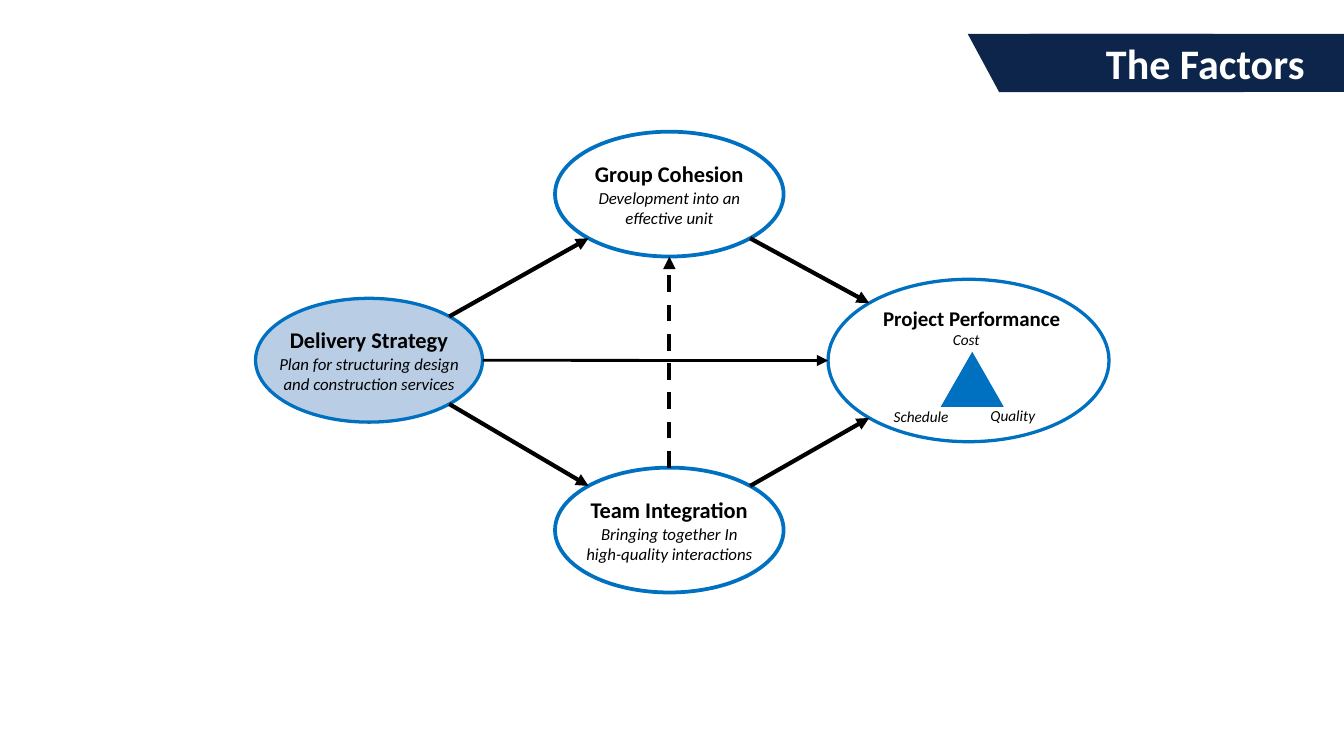
from math import sqrt

from pptx import Presentation
from pptx.dml.color import RGBColor
from pptx.enum.dml import MSO_LINE
from pptx.enum.shapes import MSO_CONNECTOR, MSO_SHAPE
from pptx.enum.text import MSO_ANCHOR, PP_ALIGN
from pptx.oxml.ns import qn
from pptx.util import Cm, Pt
from lxml import etree

RECTANGLE = MSO_SHAPE.RECTANGLE
PARALLELOGRAM = MSO_SHAPE.PARALLELOGRAM
OVAL = MSO_SHAPE.OVAL
TRIANGLE = MSO_SHAPE.ISOSCELES_TRIANGLE
STRAIGHT = MSO_CONNECTOR.STRAIGHT
DASH = MSO_LINE.DASH
LEFT, CENTER, RIGHT = PP_ALIGN.LEFT, PP_ALIGN.CENTER, PP_ALIGN.RIGHT
TOP, MIDDLE = MSO_ANCHOR.TOP, MSO_ANCHOR.MIDDLE

FONT = "Calibri"
NAVY, BLUE, PALE_BLUE = "0D254B", "0070C0", "B9CDE5"
BLACK, WHITE = "000000", "FFFFFF"
TITLE_ONLY = 5
DIAGONAL = 1 / sqrt(2)

# Boxes are left, top, width, height in centimetres
BANNER = (18.29, 0.64, 7.14, 1.1)
COHESION = (10.49, 2.49, 4.32, 2.36)
INTEGRATION = (10.49, 8.84, 4.32, 2.36)
STRATEGY = (4.83, 5.64, 4.29, 2.34)
PERFORMANCE = (15.65, 5.28, 5.31, 3.07)


def color(hex_string):
    return RGBColor.from_string(hex_string)


def add_shape(slide, preset, box, fill, line=None, width=1):
    shape = slide.shapes.add_shape(preset, *map(Cm, box))
    shape.shadow.inherit = False
    shape.fill.solid()
    shape.fill.fore_color.rgb = color(fill)
    if line:
        shape.line.color.rgb = color(line)
        shape.line.width = Pt(width)
    else:
        shape.line.fill.background()
    return shape


def format_frame(frame, margins=(0.25, 0.13), anchor=TOP, wrap=True):
    frame.margin_left = frame.margin_right = Cm(margins[0])
    frame.margin_top = frame.margin_bottom = Cm(margins[1])
    frame.vertical_anchor = anchor
    frame.word_wrap = wrap


def write(paragraph, text, size, ink=BLACK, bold=False, italic=False, align=LEFT):
    paragraph.text = text
    paragraph.alignment = align
    font = paragraph.font
    font.name, font.size = FONT, Pt(size)
    font.bold, font.italic = bold, italic
    font.color.rgb = color(ink)


def add_label(slide, box, text, size, margins=(0.18, 0.13), wrap=True, **style):
    frame = slide.shapes.add_textbox(*map(Cm, box)).text_frame
    format_frame(frame, margins, wrap=wrap)
    write(frame.paragraphs[0], text, size, **style)


def add_title_banner(slide, box, text):
    left, top, width, height = box
    add_shape(slide, RECTANGLE, (left + 1.17, top, width - 1.17, height), NAVY)
    slant = add_shape(slide, PARALLELOGRAM, (left, top, 5.23, height), NAVY)
    slant.adjustments[0] = 0.54
    slant.element.spPr.find(qn("a:xfrm")).set("flipH", "1")

    title = slide.shapes.title
    title.left, title.top = Cm(left + 1.62), Cm(top - 0.06)
    title.width, title.height = Cm(5), Cm(height + 0.12)
    format_frame(title.text_frame, anchor=MIDDLE)
    write(title.text_frame.paragraphs[0], text, 22.5,
          ink=WHITE, bold=True, align=RIGHT)
    # Bring the title in front of the banner
    slide.shapes.element.append(title.element)


def add_factor(slide, box, name, description, fill=WHITE, width=2):
    """Draw an ellipse with a bold name above the lines of its description."""
    shape = add_shape(slide, OVAL, box, fill, BLUE, width)
    frame = shape.text_frame
    format_frame(frame, (0, 0), MIDDLE, wrap=False)
    write(frame.paragraphs[0], name, 12, bold=True, align=CENTER)
    for line in description:
        write(frame.add_paragraph(), line, 9, italic=True, align=CENTER)


def add_performance(slide, box):
    left, top, _, _ = box
    add_shape(slide, OVAL, box, WHITE, BLUE, 1.75)
    add_shape(slide, TRIANGLE, (left + 2.13, top + 1.37, 1.19, 1.04), BLUE)
    add_label(slide, (left + 0.76, top + 0.36, 3.91, 0.74), "Project Performance",
              11.2, margins=(0.25, 0.13), wrap=False, bold=True, align=CENTER)
    for text, x, y, width in (("Cost", 2.18, 0.84, 1.32),
                              ("Quality", 2.89, 2.26, 1.75),
                              ("Schedule", 1.06, 2.28, 2.24)):
        add_label(slide, (left + x, top + y, width, 0.61), text, 8.2, italic=True)


def rim_point(box, across, down):
    """Return the ellipse point in a direction given by -1, 0 or 1 on each axis."""
    left, top, width, height = box
    reach = DIAGONAL if across and down else 1
    return (left + width / 2 * (1 + across * reach),
            top + height / 2 * (1 + down * reach))


def add_arrow(slide, start, end, width=2.25, dash=None):
    arrow = slide.shapes.add_connector(STRAIGHT, *map(Cm, start + end))
    arrow.line.color.rgb = color(BLACK)
    arrow.line.width = Pt(width)
    if dash:
        arrow.line.dash_style = dash
    properties = arrow.element.spPr
    etree.SubElement(properties.find(qn("a:ln")), qn("a:tailEnd"), type="triangle")
    etree.SubElement(properties, qn("a:effectLst"))


def add_arrows(slide):
    for box, side in ((COHESION, -1), (INTEGRATION, 1)):
        add_arrow(slide, rim_point(STRATEGY, 1, side), rim_point(box, -1, -side))
        add_arrow(slide, rim_point(box, 1, -side), rim_point(PERFORMANCE, -1, side))
    add_arrow(slide, rim_point(STRATEGY, 1, 0), rim_point(PERFORMANCE, -1, 0), 1.5)
    add_arrow(slide, rim_point(INTEGRATION, 0, -1), rim_point(COHESION, 0, 1),
              dash=DASH)


def main():
    presentation = Presentation()
    presentation.slide_width, presentation.slide_height = Cm(25.4), Cm(14.29)
    slide = presentation.slides.add_slide(presentation.slide_layouts[TITLE_ONLY])
    add_title_banner(slide, BANNER, "The Factors")
    add_factor(slide, COHESION, "Group Cohesion",
               ("Development into an", "effective unit"))
    add_factor(slide, INTEGRATION, "Team Integration",
               ("Bringing together In", "high-quality interactions"))
    add_factor(slide, STRATEGY, "Delivery Strategy",
               ("Plan for structuring design", "and construction services"),
               PALE_BLUE, 1.75)
    add_performance(slide, PERFORMANCE)
    add_arrows(slide)
    presentation.save("out.pptx")


if __name__ == "__main__":
    main()
